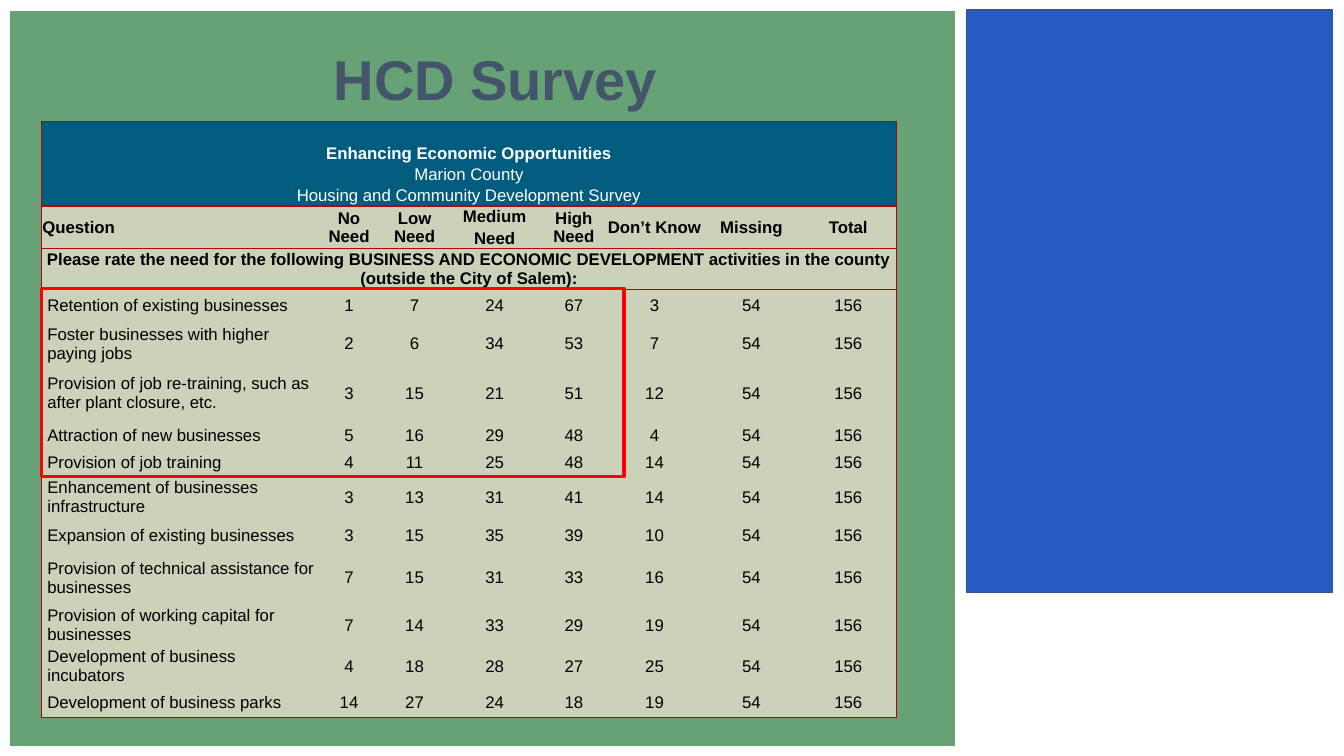
from dataclasses import dataclass

from lxml.etree import SubElement
from pptx import Presentation
from pptx.dml.color import RGBColor
from pptx.enum.shapes import MSO_SHAPE
from pptx.enum.text import MSO_ANCHOR, PP_ALIGN
from pptx.oxml.ns import qn
from pptx.slide import Slide
from pptx.table import Table, _Cell
from pptx.text.text import TextFrame
from pptx.util import Pt


@dataclass(frozen=True)
class Theme:
    font: str = "Arial"
    title_size: float = 40
    table_size: float = 12
    title: str = "44546A"
    backdrop: str = "67A176"
    side: str = "285BC2"
    side_edge: str = "325491"
    banner: str = "025C7E"
    body: str = "CCD1B9"
    rule: str = "BB0000"
    highlight: str = "FF0000"
    white: str = "FFFFFF"
    black: str = "000000"


@dataclass(frozen=True)
class Panel:
    left: float
    top: float
    width: float
    height: float
    line: str
    line_width: float
    fill: str | None = None


@dataclass(frozen=True)
class Style:
    size: float
    color: str
    bold: bool = False
    align: PP_ALIGN = PP_ALIGN.CENTER


@dataclass(frozen=True)
class Need:
    """Survey answers for one activity, from no need to don't know."""
    activity: str
    answers: tuple[int, int, int, int, int]
    height: float


THEME = Theme()
BACKDROP = Panel(6.5, 7.2, 676.1, 526.3, THEME.white, 1, THEME.backdrop)
SIDE = Panel(690.5, 7.2, 261.4, 416.2, THEME.side_edge, 1, THEME.side)
TOP_NEEDS = Panel(29.5, 205.9, 416.2, 134.6, THEME.highlight, 2.25)

MISSING, TOTAL = 54, 156
BANNER = ("", "Enhancing Economic Opportunities", "Marion County",
          "Housing and Community Development Survey")
HEADINGS = ("Question", "No Need", "Low Need", "Medium", "High Need",
            "Don’t Know", "Missing", "Total")
PROMPT = ("Please rate the need for the following BUSINESS AND ECONOMIC DEVELOPMENT "
          "activities in the county (outside the City of Salem):")
NEEDS = (
    Need("Retention of existing businesses", (1, 7, 24, 67, 3), 22.3),
    Need("Foster businesses with higher paying jobs", (2, 6, 34, 53, 7), 32.4),
    Need("Provision of job re-training, such as after plant closure, etc.",
         (3, 15, 21, 51, 12), 38.2),
    Need("Attraction of new businesses", (5, 16, 29, 48, 4), 22.3),
    Need("Provision of job training", (4, 11, 25, 48, 14), 16.6),
    Need("Enhancement of businesses infrastructure", (3, 13, 31, 41, 14), 32.4),
    Need("Expansion of existing businesses", (3, 15, 35, 39, 10), 22.3),
    Need("Provision of technical assistance for businesses", (7, 15, 31, 33, 16), 38.2),
    Need("Provision of working capital for businesses", (7, 14, 33, 29, 19), 28.3),
    Need("Development of business incubators", (4, 18, 28, 27, 25), 28.3),
    Need("Development of business parks", (14, 27, 24, 18, 19), 22.3),
)

COLUMN_WIDTHS = (196.8, 46.1, 47.5, 67, 46.1, 69.2, 69.2, 69.2)
HEADING_ROW = len(BANNER)
PROMPT_ROW = HEADING_ROW + 2
FIRST_NEED_ROW = PROMPT_ROW + 1
ROW_HEIGHTS = (*[14.8] * PROMPT_ROW, 29.3, *[need.height for need in NEEDS])
RULED_ABOVE = {0, HEADING_ROW, PROMPT_ROW, FIRST_NEED_ROW}
RULED_BELOW = {row - 1 for row in RULED_ABOVE if row} | {len(ROW_HEIGHTS) - 1}


def rgb(color: str) -> RGBColor:
    return RGBColor.from_string(color)


def draw_panel(slide: Slide, panel: Panel) -> None:
    box = slide.shapes.add_shape(MSO_SHAPE.RECTANGLE, Pt(panel.left), Pt(panel.top),
                                 Pt(panel.width), Pt(panel.height))
    box.shadow.inherit = False
    if panel.fill:
        box.fill.solid()
        box.fill.fore_color.rgb = rgb(panel.fill)
    else:
        box.fill.background()
    box.line.color.rgb = rgb(panel.line)
    box.line.width = Pt(panel.line_width)


def write(frame: TextFrame, text: str, style: Style) -> None:
    paragraph = frame.paragraphs[0]
    paragraph.alignment = style.align
    run = paragraph.add_run()
    run.text = text
    run.font.name = THEME.font
    run.font.size = Pt(style.size)
    run.font.bold = style.bold
    run.font.color.rgb = rgb(style.color)


def draw_title(slide: Slide) -> None:
    title = slide.shapes.add_textbox(Pt(20.2), Pt(32.5), Pt(667.4), Pt(46)).text_frame
    title.word_wrap = True
    title.margin_top = title.margin_bottom = 0
    title.vertical_anchor = MSO_ANCHOR.MIDDLE
    write(title, "HCD Survey", Style(THEME.title_size, THEME.title, bold=True))


def set_borders(cell: _Cell, row: int, column: int) -> None:
    ruled = {
        "a:lnL": column == 0,
        "a:lnR": column + cell.span_width == len(COLUMN_WIDTHS),
        "a:lnT": row in RULED_ABOVE,
        "a:lnB": row + cell.span_height - 1 in RULED_BELOW,
    }
    properties = cell._tc.get_or_add_tcPr()
    for side, shown in ruled.items():
        border = SubElement(properties, qn(side), w=str(Pt(1)))
        if shown:
            color = SubElement(border, qn("a:solidFill"))
            SubElement(color, qn("a:srgbClr"), val=THEME.rule)
        else:
            SubElement(border, qn("a:noFill"))


def format_cells(table: Table) -> None:
    for row in range(len(ROW_HEIGHTS)):
        for column in range(len(COLUMN_WIDTHS)):
            cell = table.cell(row, column)
            activity = column == 0 and row >= FIRST_NEED_ROW
            cell.margin_left = Pt(4.3 if activity else 0.7)
            cell.margin_right = cell.margin_top = Pt(0.7)
            cell.margin_bottom = 0
            cell.vertical_anchor = MSO_ANCHOR.MIDDLE
            set_borders(cell, row, column)
            cell.fill.solid()
            cell.fill.fore_color.rgb = rgb(THEME.banner if row < HEADING_ROW else THEME.body)
            if not cell.text:
                SubElement(cell.text_frame.paragraphs[0]._p, qn("a:endParaRPr"),
                           sz=str(int(THEME.table_size * 100)))


def draw_survey(slide: Slide) -> None:
    table = slide.shapes.add_table(
        len(ROW_HEIGHTS), len(COLUMN_WIDTHS), Pt(29.5), Pt(86.7),
        Pt(sum(COLUMN_WIDTHS)), Pt(sum(ROW_HEIGHTS))).table
    table.first_row = table.horz_banding = False
    for column, width in zip(table.columns, COLUMN_WIDTHS):
        column.width = Pt(width)
    for row, height in zip(table.rows, ROW_HEIGHTS):
        row.height = Pt(height)

    size = THEME.table_size
    heading = Style(size, THEME.black, bold=True)
    question = Style(size, THEME.black, bold=True, align=PP_ALIGN.LEFT)
    activity = Style(size, THEME.black, align=PP_ALIGN.LEFT)
    count = Style(size, THEME.black)

    for row in (*range(HEADING_ROW), PROMPT_ROW):
        table.cell(row, 0).merge(table.cell(row, len(COLUMN_WIDTHS) - 1))
    for row, line in enumerate(BANNER):
        if line:
            write(table.cell(row, 0).text_frame, line, Style(size, THEME.white, bold=row == 1))
    for column, label in enumerate(HEADINGS):
        cell = table.cell(HEADING_ROW, column)
        below = table.cell(HEADING_ROW + 1, column)
        if label == "Medium":
            write(below.text_frame, "Need", heading)
        else:
            cell.merge(below)
        write(cell.text_frame, label, heading if column else question)
    write(table.cell(PROMPT_ROW, 0).text_frame, PROMPT, heading)
    for row, need in enumerate(NEEDS, FIRST_NEED_ROW):
        write(table.cell(row, 0).text_frame, need.activity, activity)
        for column, value in enumerate((*need.answers, MISSING, TOTAL), 1):
            write(table.cell(row, column).text_frame, str(value), count)
    format_cells(table)


def main() -> None:
    presentation = Presentation()
    presentation.slide_width, presentation.slide_height = Pt(960), Pt(540)
    slide = presentation.slides.add_slide(presentation.slide_layouts[6])
    draw_panel(slide, BACKDROP)
    draw_panel(slide, SIDE)
    draw_title(slide)
    draw_survey(slide)
    draw_panel(slide, TOP_NEEDS)
    presentation.save("out.pptx")


if __name__ == "__main__":
    main()
